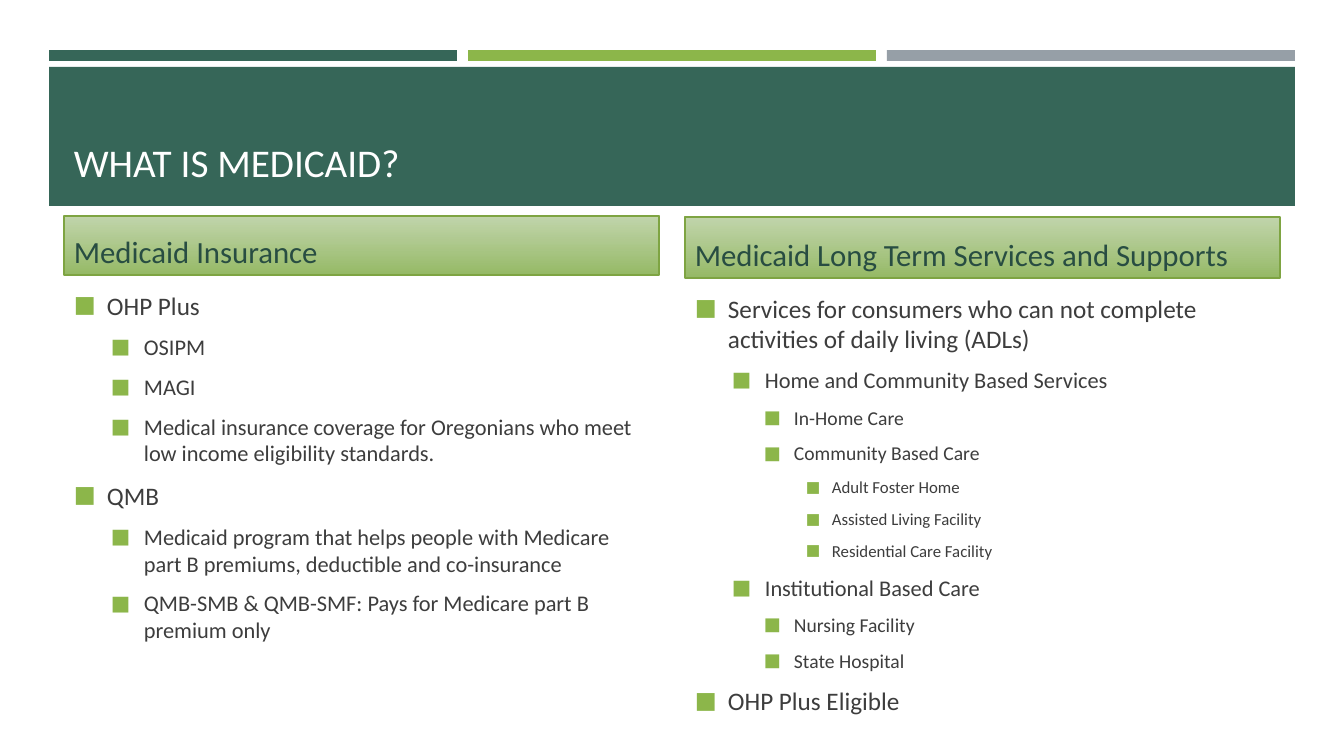
from lxml import etree
from pptx import Presentation
from pptx.dml.color import RGBColor
from pptx.enum.shapes import MSO_SHAPE
from pptx.enum.text import MSO_ANCHOR, PP_ALIGN
from pptx.oxml.ns import qn
from pptx.util import Emu, Pt

RECT = MSO_SHAPE.RECTANGLE
TOP, BOTTOM = MSO_ANCHOR.TOP, MSO_ANCHOR.BOTTOM
LEFT = PP_ALIGN.LEFT

FONT = "Calibri"
WHITE = RGBColor(0xFF, 0xFF, 0xFF)
TEAL = RGBColor(0x36, 0x66, 0x58)
GREEN = RGBColor(0x8C, 0xB6, 0x4A)
GRAY = RGBColor(0x96, 0x9F, 0xA7)
HEADER_TOP = RGBColor(0xBB, 0xD1, 0xA3)
HEADER_BOTTOM = RGBColor(0x96, 0xBA, 0x66)
HEADER_LINE = RGBColor(0x7E, 0xA4, 0x42)
HEADER_TEXT = RGBColor(0x28, 0x4D, 0x42)
BODY_TEXT = RGBColor(0x3D, 0x3D, 0x3D)

COLUMN_WIDTH = 595

# Per list level: font size in points, left margin and hanging indent in px
LEVELS = [(18, 33, 33), (16, 70, 33), (14, 99, 30), (12, 137, 26)]

INSURANCE = [
    (0, "OHP Plus"),
    (1, "OSIPM"),
    (1, "MAGI"),
    (1, "Medical insurance coverage for Oregonians who meet low income "
        "eligibility standards."),
    (0, "QMB"),
    (1, "Medicaid program that helps people with Medicare part B premiums, "
        "deductible and co-insurance"),
    (1, "QMB-SMB & QMB-SMF: Pays for Medicare part B premium only"),
]
SERVICES = [
    (0, "Services for consumers who can not complete activities of daily "
        "living (ADLs)"),
    (1, "Home and Community Based Services"),
    (2, "In-Home Care"),
    (2, "Community Based Care"),
    (3, "Adult Foster Home"),
    (3, "Assisted Living Facility"),
    (3, "Residential Care Facility"),
    (1, "Institutional Based Care"),
    (2, "Nursing Facility"),
    (2, "State Hospital"),
    (0, "OHP Plus Eligible"),
]


def px(n):
    return Emu(round(n * 914400 / 100.8))


def add_child(parent, tag, **attrs):
    return etree.SubElement(parent, qn(tag), attrs)


def add_rect(slide, x, y, w, h, color):
    sp = slide.shapes.add_shape(RECT, px(x), px(y), px(w), px(h))
    sp.shadow.inherit = False
    sp.fill.solid()
    sp.fill.fore_color.rgb = color
    sp.line.fill.background()
    return sp


def add_textbox(slide, x, y, w, h):
    return slide.shapes.add_textbox(px(x), px(y), px(w), px(h))


def set_bullet(p, level):
    _, margin, hanging = LEVELS[level]
    p.level = level
    pPr = p._p.get_or_add_pPr()
    pPr.set("marL", str(px(margin)))
    pPr.set("indent", str(-px(hanging)))
    add_child(add_child(pPr, "a:buClr"), "a:srgbClr", val=str(GREEN))
    add_child(pPr, "a:buSzPct", val="92000")
    add_child(pPr, "a:buFont", typeface=FONT)
    add_child(pPr, "a:buChar", char="■")


def write(sp, items, color, size=None, anchor=TOP, spaced=True, bullets=False):
    """Write (level, text) items; without a size, the level sets it."""
    tf = sp.text_frame
    tf.word_wrap = True
    tf.vertical_anchor = anchor
    for i, (level, text) in enumerate(items):
        p = tf.paragraphs[0] if i == 0 else tf.add_paragraph()
        p.alignment = LEFT
        if spaced:
            before = add_child(p._p.get_or_add_pPr(), "a:spcBef")
            add_child(before, "a:spcPct", val="20000")
            p.space_after = Pt(6)
        if bullets:
            set_bullet(p, level)
        r = p.add_run()
        r.text = text
        r.font.name = FONT
        r.font.size = Pt(size or LEVELS[level][0])
        r.font.color.rgb = color


def add_header(slide, x, y, h, text):
    sp = add_rect(slide, x, y, COLUMN_WIDTH, h, HEADER_TOP)
    sp.fill.gradient()
    sp.fill.gradient_angle = 270
    first, last = sp.fill.gradient_stops
    first.color.rgb = HEADER_TOP
    last.color.rgb = HEADER_BOTTOM
    for clr in list(sp._element.spPr.iter(qn("a:srgbClr")))[:1]:
        add_child(clr, "a:alpha", val="90000")
    sp.line.color.rgb = HEADER_LINE
    sp.line.width = Pt(1)
    write(sp, [(0, text)], HEADER_TEXT, size=22, anchor=BOTTOM)


def main():
    prs = Presentation()
    prs.slide_width, prs.slide_height = px(1344), px(756)
    slide = prs.slides.add_slide(prs.slide_layouts[6])

    # Three accent bars above the title band
    for i, color in enumerate([TEAL, GREEN, GRAY]):
        add_rect(slide, 49 + 419 * i, 50, 408, 11, color)

    # Title band
    add_rect(slide, 49, 67, 1246, 139, TEAL)
    title = add_textbox(slide, 64, 81, 1216, 109)
    write(title, [(0, "WHAT IS MEDICAID?")], WHITE, size=28, anchor=BOTTOM,
          spaced=False)

    # Two columns, each a header over a bulleted list
    columns = [
        (64, 216, 59, "Medicaid Insurance", 285, 390, INSURANCE),
        (685, 217, 61, "Medicaid Long Term Services and Supports", 288, 437,
         SERVICES),
    ]
    for x, header_y, header_h, heading, list_y, list_h, items in columns:
        add_header(slide, x, header_y, header_h, heading)
        body = add_textbox(slide, x, list_y, COLUMN_WIDTH, list_h)
        write(body, items, BODY_TEXT, bullets=True)

    prs.save("out.pptx")


if __name__ == "__main__":
    main()
